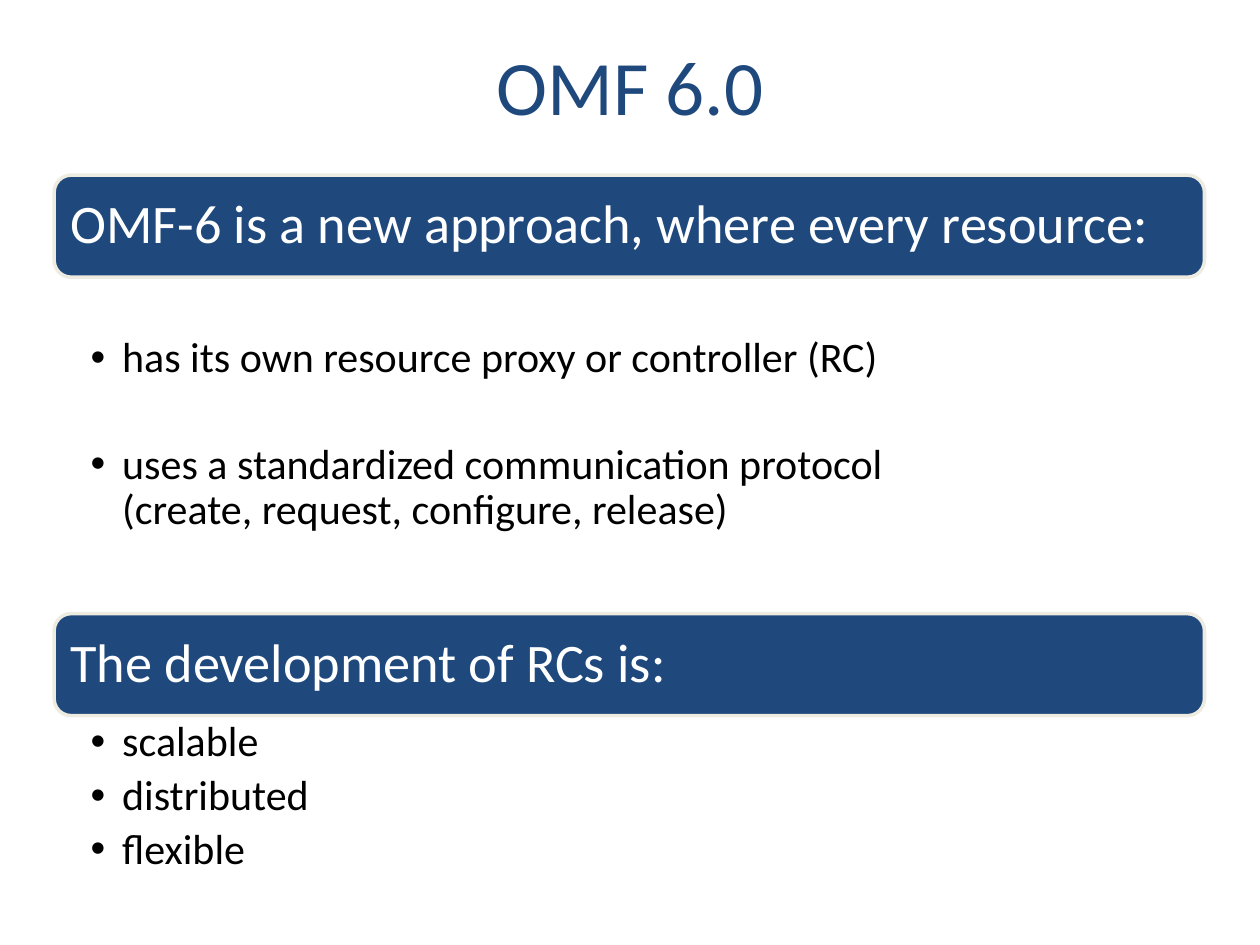
from lxml import etree
from pptx import Presentation
from pptx.dml.color import RGBColor
from pptx.enum import shapes, text
from pptx.oxml.ns import qn
from pptx.util import Inches, Pt

NAVY = RGBColor(0x1F, 0x49, 0x7D)
CREAM = RGBColor(0xEE, 0xEC, 0xE1)
WHITE = RGBColor(0xFF, 0xFF, 0xFF)
BLACK = RGBColor(0, 0, 0)

LEFT, WIDTH = Inches(0.43), Inches(9.13)
BAR_HEIGHT = Inches(0.81)

# heading, bar top, list height, list top inset, space after each bullet, bullets
SECTIONS = [
    ("OMF-6 is a new approach, where every resource:", 1.39, 2.67, 0.47, 35,
     ["has its own resource proxy or controller (RC)",
      "uses a standardized communication protocol\n"
      "(create, request, configure, release)"]),
    ("The development of RCs is:", 4.87, 1.37, 0.04, 4.8,
     ["scalable", "distributed", "flexible"]),
]


def write(paragraph, content, size, color):
    paragraph.text = content
    for run in paragraph.runs:
        run.font.name = "Calibri"
        run.font.size = Pt(size)
        run.font.color.rgb = color


def add_bullet(paragraph):
    properties = paragraph._p.get_or_add_pPr()
    properties.set("marL", str(Inches(0.25)))
    properties.set("indent", str(-Inches(0.25)))
    etree.SubElement(properties, qn("a:buFont"), typeface="Arial")
    etree.SubElement(properties, qn("a:buChar"), char="•")


presentation = Presentation()
presentation.slide_width = Inches(10)
presentation.slide_height = Inches(7.5)
slide = presentation.slides.add_slide(presentation.slide_layouts[6])

title = slide.shapes.add_textbox(Inches(0.5), Inches(0.05), Inches(9), Inches(1.25))
title.text_frame.word_wrap = True
title.text_frame.vertical_anchor = text.MSO_ANCHOR.MIDDLE
write(title.text_frame.paragraphs[0], "OMF 6.0", 44, NAVY)
title.text_frame.paragraphs[0].alignment = text.PP_ALIGN.CENTER

for heading, top, list_height, list_inset, gap, bullets in SECTIONS:
    bar = slide.shapes.add_shape(
        shapes.MSO_SHAPE.ROUNDED_RECTANGLE, LEFT, Inches(top), WIDTH, BAR_HEIGHT)
    bar.shadow.inherit = False
    bar.fill.solid()
    bar.fill.fore_color.rgb = NAVY
    bar.line.color.rgb = CREAM
    bar.line.width = Pt(2)
    frame = bar.text_frame
    frame.word_wrap = True
    frame.vertical_anchor = text.MSO_ANCHOR.MIDDLE
    frame.margin_left = frame.margin_right = Inches(0.09)
    paragraph = frame.paragraphs[0]
    write(paragraph, heading, 31, WHITE)
    paragraph.alignment = text.PP_ALIGN.LEFT
    paragraph.line_spacing = 0.9

    bullet_list = slide.shapes.add_textbox(
        LEFT, Inches(top) + BAR_HEIGHT, WIDTH, Inches(list_height))
    frame = bullet_list.text_frame
    frame.word_wrap = True
    frame.margin_left, frame.margin_right = Inches(0.29), Inches(0.24)
    frame.margin_top, frame.margin_bottom = Inches(list_inset), Inches(0.04)
    for index, bullet in enumerate(bullets):
        paragraph = frame.add_paragraph() if index else frame.paragraphs[0]
        write(paragraph, bullet, 24, BLACK)
        paragraph.line_spacing = 0.9
        paragraph.space_after = Pt(gap)
        add_bullet(paragraph)

presentation.save("out.pptx")
